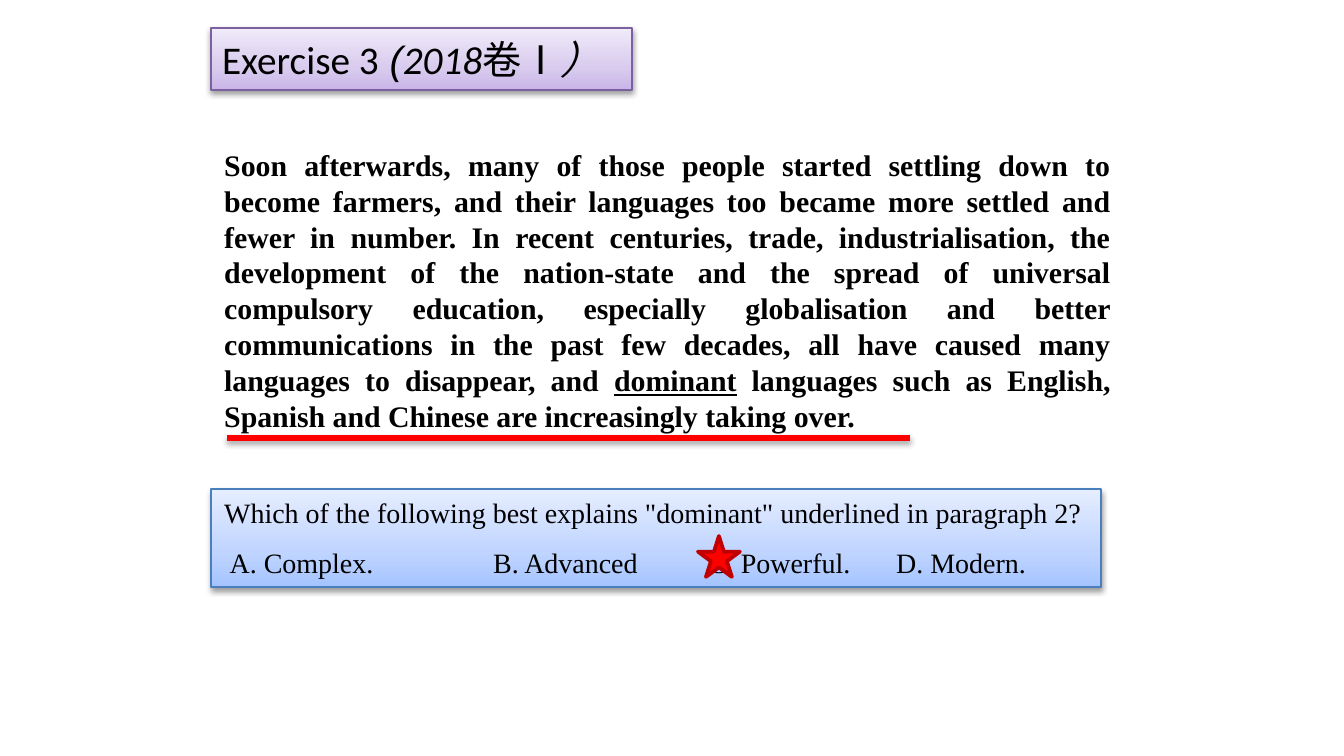
from dataclasses import dataclass

from lxml import etree
from pptx import Presentation
from pptx.dml.color import RGBColor
from pptx.enum.shapes import MSO_CONNECTOR, MSO_SHAPE
from pptx.enum.text import MSO_ANCHOR, MSO_AUTO_SIZE, PP_ALIGN
from pptx.oxml.ns import qn
from pptx.util import Emu, Pt

SLIDE_W, SLIDE_H = 1344, 756
EMU_PER_PX = 914400 / 134.4
TITLE_ONLY = 5

RECTANGLE, STAR = MSO_SHAPE.RECTANGLE, MSO_SHAPE.STAR_5_POINT
STRAIGHT = MSO_CONNECTOR.STRAIGHT
LEFT, JUSTIFY = PP_ALIGN.LEFT, PP_ALIGN.JUSTIFY
TOP, MIDDLE = MSO_ANCHOR.TOP, MSO_ANCHOR.MIDDLE
NO_AUTOFIT = MSO_AUTO_SIZE.NONE

BLACK = RGBColor(0x00, 0x00, 0x00)
RED = RGBColor(0xFF, 0x00, 0x00)
DARK_RED = RGBColor(0xC0, 0x00, 0x00)
PURPLE_LINE = RGBColor(0x7D, 0x60, 0xA0)
BLUE_LINE = RGBColor(0x4B, 0x7E, 0xBC)
PURPLES = (RGBColor(0xC9, 0xB5, 0xE8), RGBColor(0xD8, 0xCB, 0xEE), RGBColor(0xF0, 0xEA, 0xF9))
BLUES = (RGBColor(0xA4, 0xC4, 0xFF), RGBColor(0xBF, 0xD4, 0xFF), RGBColor(0xE6, 0xEE, 0xFF))
STOP_PERCENTS = (0, 35, 100)

SERIF, SANS, ARIAL = "Times New Roman", "Calibri", "Arial"


@dataclass(frozen=True)
class Box:
    left: int
    top: int
    width: int
    height: int


@dataclass(frozen=True)
class Words:
    text: str
    font: str
    size: int
    bold: bool = False
    italic: bool = False
    underline: bool = False


TITLE_BOX = Box(211, 28, 421, 62)
PASSAGE_BOX = Box(211, 140, 913, 302)
QUESTION_BOX = Box(211, 489, 890, 98)
STAR_BOX = Box(698, 536, 42, 41)
UNDERLINE_START, UNDERLINE_END, UNDERLINE_Y = 227, 910, 438
OPTION_TABS = (269, 484, 672)

TITLE = (
    Words("Exercise 3", SANS, 21),
    Words(" (", ARIAL, 21, italic=True),
    Words("2018", SANS, 21, italic=True),
    Words("卷Ⅰ", SANS, 21),
    Words("）", SANS, 21, italic=True),
)
PASSAGE = (
    Words(
        "Soon afterwards, many of those people started settling down to become farmers, "
        "and their languages too became more settled and fewer in number. In recent "
        "centuries, trade, industrialisation, the development of the nation-state and the "
        "spread of universal compulsory education, especially globalisation and better "
        "communications in the past few decades, all have caused many languages to "
        "disappear, and ", SERIF, 16, bold=True),
    Words("dominant", SERIF, 16, bold=True, underline=True),
    Words(" languages such as English, Spanish and Chinese are increasingly taking over.",
          SERIF, 16, bold=True),
)
QUESTION = Words(
    'Which of the following best explains "dominant" underlined in paragraph 2?', SERIF, 15)
OPTIONS = Words(" A. Complex.\tB. Advanced\tC. Powerful.\tD. Modern.", SERIF, 15)


def px(length: int) -> Emu:
    return Emu(round(length * EMU_PER_PX))


def bounds(box: Box) -> tuple[Emu, ...]:
    return px(box.left), px(box.top), px(box.width), px(box.height)


def add_words(paragraph, words: tuple[Words, ...], alignment=LEFT) -> None:
    paragraph.alignment = alignment
    for part in words:
        run = paragraph.add_run()
        run.text = part.text
        font = run.font
        font.name, font.size, font.color.rgb = part.font, Pt(part.size), BLACK
        font.bold, font.italic, font.underline = part.bold, part.italic, part.underline


def set_frame(frame, anchor) -> None:
    frame.word_wrap = True
    frame.auto_size = NO_AUTOFIT
    frame.vertical_anchor = anchor


def add_shadow(shape, opacity: int, distance: float) -> None:
    """Drop a soft black shadow straight down; distance is in points."""
    effects = shape._element.spPr.get_or_add_effectLst() if hasattr(
        shape._element.spPr, "get_or_add_effectLst") else etree.SubElement(
        shape._element.spPr, qn("a:effectLst"))
    shadow = etree.SubElement(
        effects, qn("a:outerShdw"), blurRad=str(Pt(3.1)), dist=str(Pt(distance)),
        dir="5400000", rotWithShape="0")
    color = etree.SubElement(shadow, qn("a:srgbClr"), val=str(BLACK))
    etree.SubElement(color, qn("a:alpha"), val=str(opacity * 1000))


def style_panel(shape, colors: tuple[RGBColor, ...], outline: RGBColor) -> None:
    """Give a panel a gradient rising from its bottom edge, an outline and a shadow."""
    shape.fill.gradient()
    shape.fill.gradient_angle = 90
    stops = shape._element.spPr.find(qn("a:gradFill")).find(qn("a:gsLst"))
    for stop in list(stops):
        stops.remove(stop)
    for percent, color in zip(STOP_PERCENTS, colors):
        stop = etree.SubElement(stops, qn("a:gs"), pos=str(percent * 1000))
        etree.SubElement(stop, qn("a:srgbClr"), val=str(color))
    shape.line.color.rgb = outline
    shape.line.width = Pt(0.75)
    add_shadow(shape, 38, 1.6)


def add_title(slide) -> None:
    title = slide.shapes.title
    title.left, title.top, title.width, title.height = bounds(TITLE_BOX)
    style_panel(title, PURPLES, PURPLE_LINE)
    frame = title.text_frame
    set_frame(frame, MIDDLE)
    frame.margin_left = frame.margin_right = px(11)
    frame.margin_top = frame.margin_bottom = px(5)
    add_words(frame.paragraphs[0], TITLE)


def add_passage(slide) -> None:
    frame = slide.shapes.add_textbox(*bounds(PASSAGE_BOX)).text_frame
    set_frame(frame, TOP)
    add_words(frame.paragraphs[0], PASSAGE, JUSTIFY)


def add_question(slide) -> None:
    panel = slide.shapes.add_shape(RECTANGLE, *bounds(QUESTION_BOX))
    style_panel(panel, BLUES, BLUE_LINE)
    frame = panel.text_frame
    set_frame(frame, TOP)
    add_words(frame.paragraphs[0], (QUESTION,))
    options = frame.add_paragraph()
    options.line_spacing = 1.5
    add_words(options, (OPTIONS,))
    tabs = etree.SubElement(options._p.get_or_add_pPr(), qn("a:tabLst"))
    for position in OPTION_TABS:
        etree.SubElement(tabs, qn("a:tab"), pos=str(px(position)), algn="l")


def add_underline(slide) -> None:
    line = slide.shapes.add_connector(
        STRAIGHT, px(UNDERLINE_START), px(UNDERLINE_Y), px(UNDERLINE_END), px(UNDERLINE_Y))
    line.line.color.rgb = RED
    line.line.width = Pt(3)
    add_shadow(line, 35, 1.8)


def add_answer_star(slide) -> None:
    star = slide.shapes.add_shape(STAR, *bounds(STAR_BOX))
    star.shadow.inherit = False
    star.fill.solid()
    star.fill.fore_color.rgb = RED
    star.line.color.rgb = DARK_RED
    star.line.width = Pt(2)


def main() -> None:
    deck = Presentation()
    deck.slide_width, deck.slide_height = px(SLIDE_W), px(SLIDE_H)
    slide = deck.slides.add_slide(deck.slide_layouts[TITLE_ONLY])
    add_passage(slide)
    add_title(slide)
    add_question(slide)
    add_underline(slide)
    add_answer_star(slide)
    deck.save("out.pptx")


if __name__ == "__main__":
    main()
